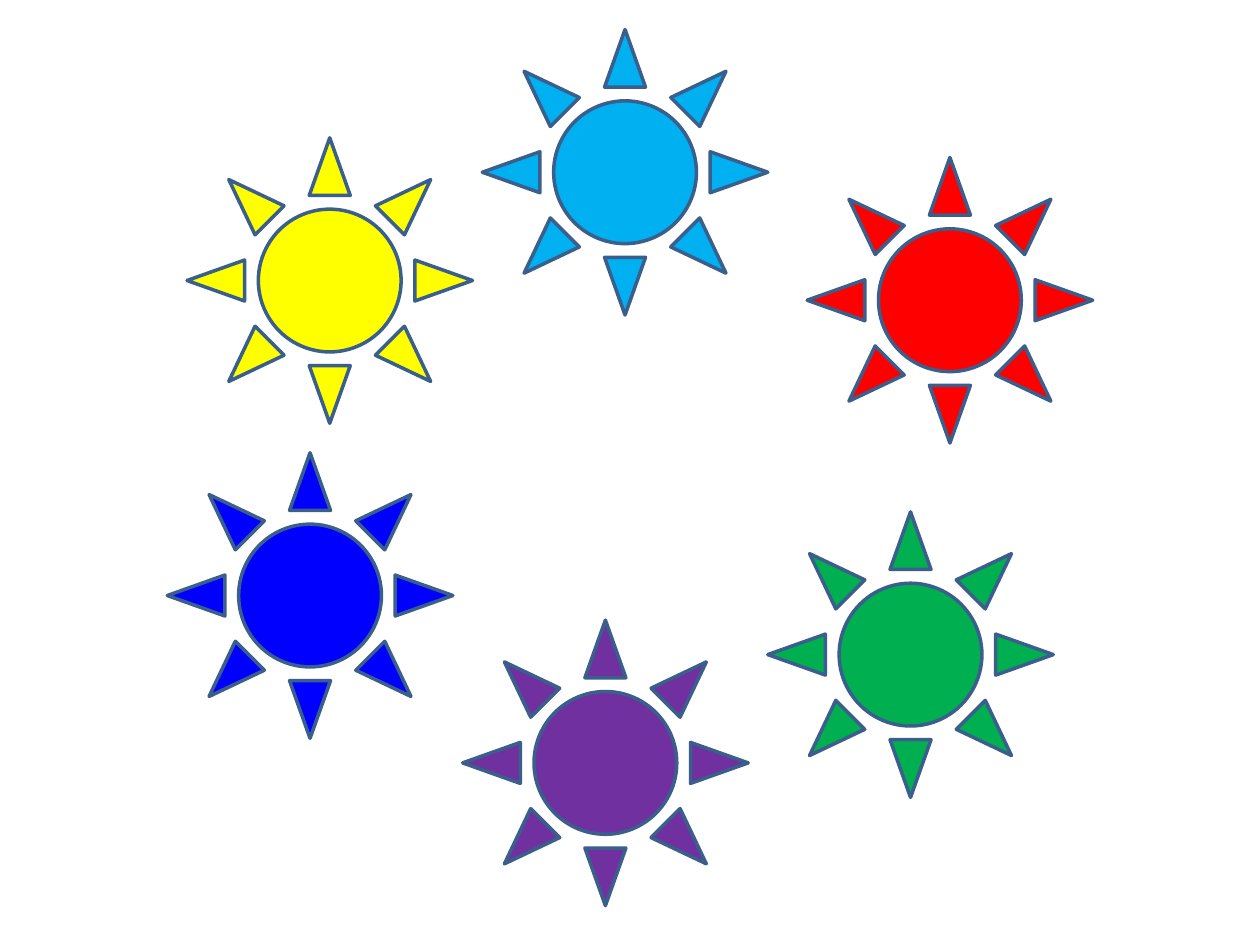
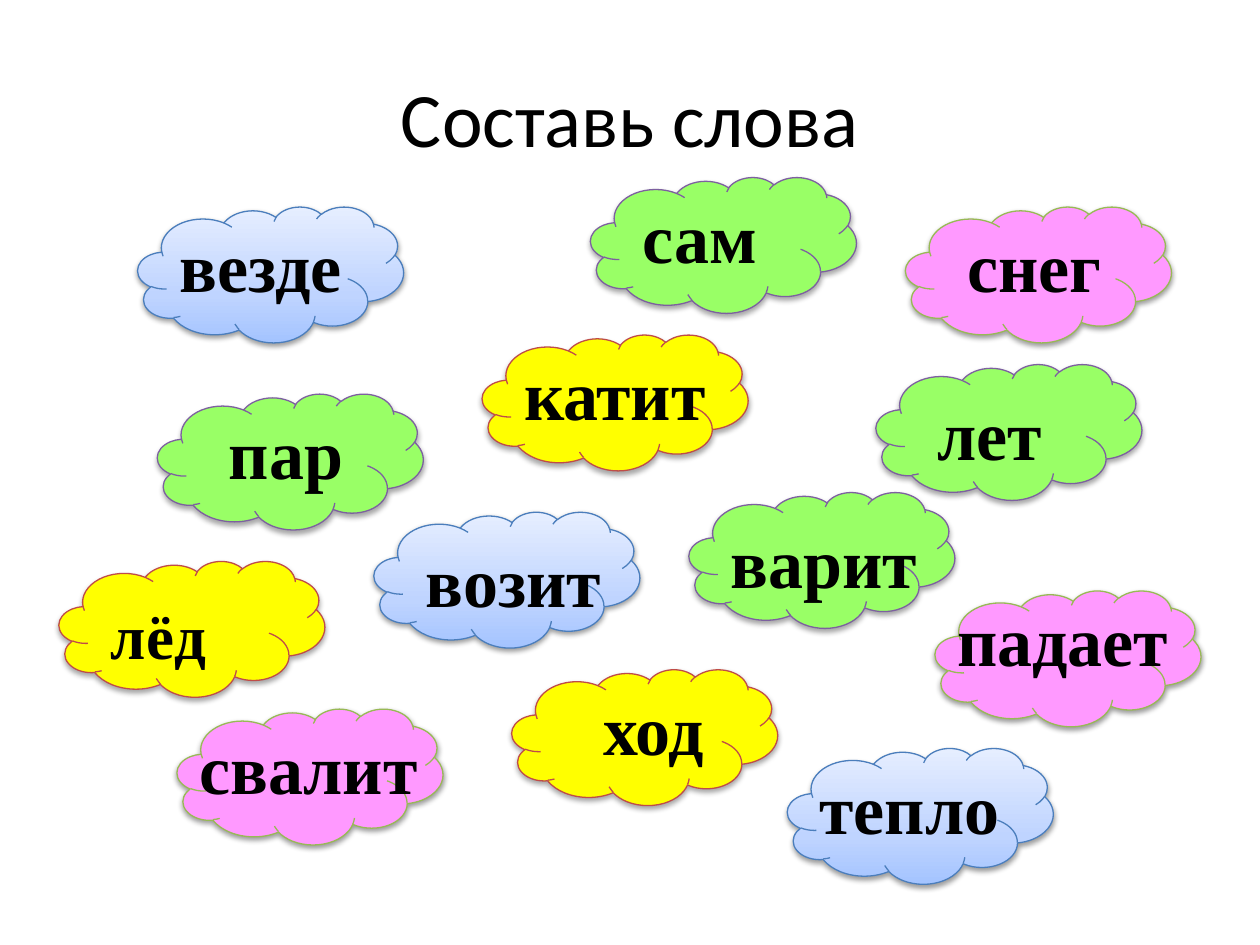
from copy import deepcopy

from lxml import etree
from pptx import Presentation
from pptx import util as u
from pptx.dml.color import RGBColor
from pptx.enum import shapes, text
from pptx.oxml import ns

# Slide size and grid
WIDE, HIGH = 10, 7.5
COLS = 64
CELL = WIDE / COLS

# Sun: side in cells, outline, then (column, row, fill)
SUN, RIM = 14.5, "3A5F8C"
SUNS = [
    (9.5, 7, "FFFF00"),
    (8.5, 23, "0000FF"),
    (39, 26, "00B050"),
    (41, 8, "FF0000"),
    (24.5, 1.5, "00B0F0"),
    (23.5, 31.5, "7030A0"),
]

# Cloud looks: fill (colour or gradient stops), outline, shadow strength in %, drop in points
CLOUD = (13.5, 6.9)
SKY = [(0, "A4C4FF"), (0.35, "BFD4FF"), (1, "E6EEFF")]
LOOKS = {
    "green": ("99FF66", "7D60A0", 35, 1.8),
    "gold": ("FFFF00", "BF4C48", 35, 1.8),
    "blue": (SKY, "4B7EBC", 38, 1.6),
    "pink": ("FF99FF", "98B955", 38, 1.6),
}

# Word, look, cloud (column, row), text box (column, row, width)
WORDS = [
    ("варит", "green", (35, 25), (36.5, 26, 12.2)),
    ("лёд", "gold", (3, 28.5), (5, 30, 11)),
    ("лет", "green", (44.5, 18.5), (47, 19.5, 10.6)),
    ("пар", "green", (8, 20), (11, 20.5, 15)),
    ("сам", "green", (30, 9), (32, 9.5, 10.5)),
    ("возит", "blue", (19, 26), (21, 27, 10.5)),
    ("тепло", "blue", (40, 38), (41, 38.5, 12)),
    ("падает", "pink", (47.5, 30), (48, 30, 12.5)),
    ("снег", "pink", (46, 10.5), (48.5, 11, 11)),
    ("свалит", "pink", (9, 36), (9.5, 36.5, 14)),
    ("катит", "gold", (24.5, 17), (26, 17.5, 15)),
    ("везде", "blue", (7, 10.5), (8.5, 11, 10.8)),
    ("ход", "gold", (26, 34), (30, 34.5, 14.5)),
]
SIZES = {"лёд": 36}


def tint(code):
    return RGBColor.from_string(code)


class Deck:
    """Holds the style and the current slide."""

    ink = "000000"
    head = "Calibri"
    body = "Times New Roman"

    def __init__(self):
        self.prs = Presentation()
        self.prs.slide_width = u.Inches(WIDE)
        self.prs.slide_height = u.Inches(HIGH)
        self.slide = None

    def page(self):
        self.slide = self.prs.slides.add_slide(self.prs.slide_layouts[6])

    def area(self, *cells):
        return [u.Inches(n * CELL) for n in cells]

    def form(self, kind, area, fill, line, width):
        item = self.slide.shapes.add_shape(kind, *self.area(*area))
        item.shadow.inherit = False
        if isinstance(fill, str):
            item.fill.solid()
            item.fill.fore_color.rgb = tint(fill)
        else:
            self.blend(item, fill)
        item.line.color.rgb = tint(line)
        item.line.width = u.Pt(width)
        return item

    def blend(self, item, stops):
        item.fill.gradient()
        item.fill.gradient_angle = 90
        marks = item.element.spPr.find(".//" + ns.qn("a:gsLst"))
        while len(marks) < len(stops):
            marks.append(deepcopy(marks[0]))
        for mark, (place, code) in zip(item.fill.gradient_stops, stops):
            mark.color.rgb = tint(code)
            mark.position = place

    def shade(self, item, alpha, drop):
        box = item.element.spPr.find(ns.qn("a:effectLst"))
        cast = etree.SubElement(
            box, ns.qn("a:outerShdw"), blurRad=str(u.Pt(3.1)),
            dist=str(u.Pt(drop)), dir="5400000", rotWithShape="0")
        color = etree.SubElement(cast, ns.qn("a:srgbClr"), val=self.ink)
        etree.SubElement(color, ns.qn("a:alpha"), val=str(alpha * 1000))

    def sun(self, col, row, fill):
        self.form(shapes.MSO_SHAPE.SUN, (col, row, SUN, SUN), fill, RIM, 2)

    def cloud(self, col, row, look):
        fill, line, alpha, drop = LOOKS[look]
        item = self.form(shapes.MSO_SHAPE.CLOUD, (col, row, *CLOUD), fill, line, 0.75)
        self.shade(item, alpha, drop)

    def label(self, words, area, size, face, bold=False):
        frame = self.slide.shapes.add_textbox(*self.area(*area)).text_frame
        frame.word_wrap = True
        frame.text = words
        font = frame.paragraphs[0].runs[0].font
        font.name, font.size, font.bold = face, u.Pt(size), bold
        font.color.rgb = tint(self.ink)
        return frame

    def title(self, words):
        frame = self.label(words, (3.2, 1.92, 57.6, 8), 44, self.head)
        frame.vertical_anchor = text.MSO_ANCHOR.MIDDLE
        frame.paragraphs[0].alignment = text.PP_ALIGN.CENTER

    def word(self, words, col, row, width):
        size = SIZES.get(words, 40)
        frame = self.label(words, (col, row, width, 4.9), size, self.body, True)
        frame.auto_size = text.MSO_AUTO_SIZE.SHAPE_TO_FIT_TEXT


def main():
    deck = Deck()

    # Ring of suns
    deck.page()
    for spot in SUNS:
        deck.sun(*spot)

    # Word clouds
    deck.page()
    for _, look, spot, _ in WORDS:
        deck.cloud(*spot, look)
    deck.title("Составь слова")
    for words, _, _, spot in WORDS:
        deck.word(words, *spot)

    deck.prs.save("out.pptx")


if __name__ == "__main__":
    main()
